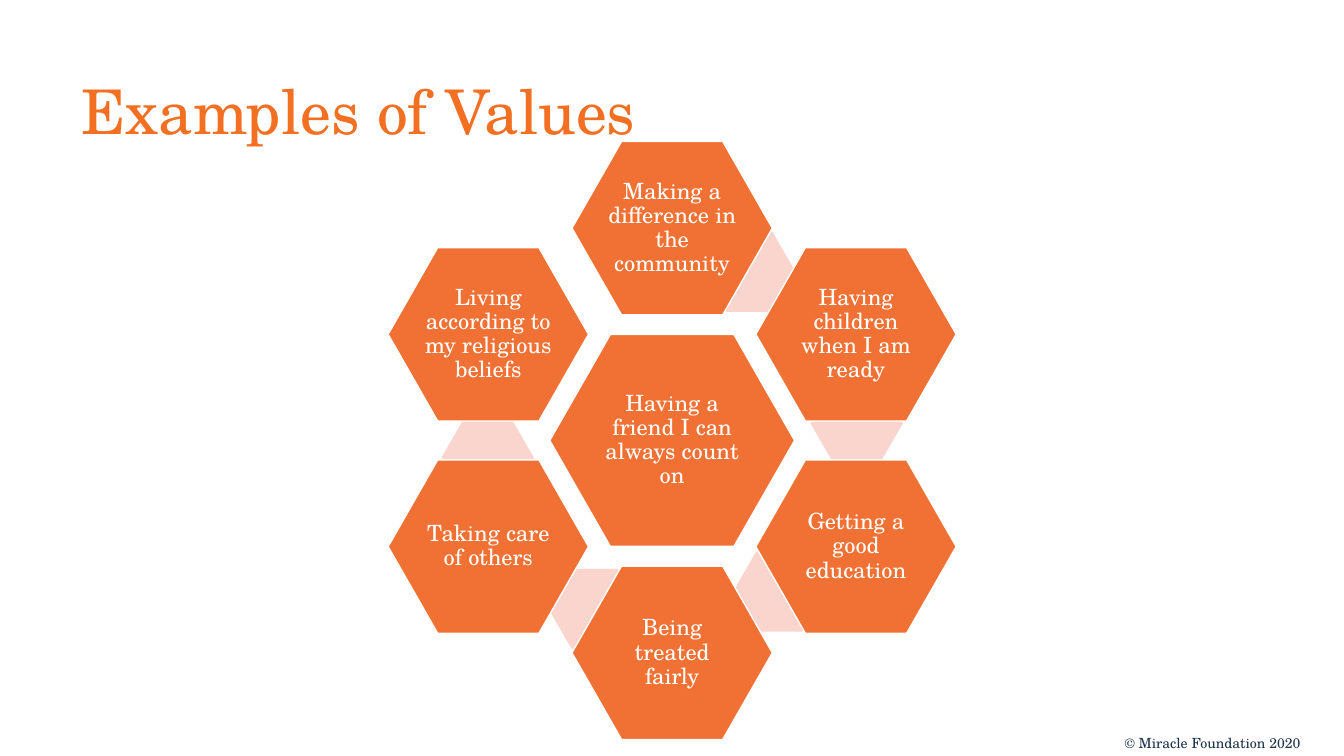
import math

import pptx
import pptx.dml.color
import pptx.enum.shapes
import pptx.enum.text
import pptx.util
from pptx.util import Cm

FONT = "TeX Gyre Schola"
ORANGE = "F17134"
PINK = "FAD5CE"
WHITE = "FFFFFF"
CENTRE_X, CENTRE_Y = 16.94, 11.1
CENTRE_VALUE = "Having a friend I can always count on"
RING_VALUES = [
    "Making a difference in the community",
    "Having children when I am ready",
    "Getting a good education",
    "Being treated fairly",
    "Taking care of others",
    "Living according to my religious beliefs",
]


def colour(hex_text):
    return pptx.dml.color.RGBColor.from_string(hex_text)


def style_paragraph(para, size, hex_text, align, spacing=None):
    para.alignment = align
    para.line_spacing = spacing
    para.font.name = FONT
    para.font.size = pptx.util.Pt(size)
    para.font.color.rgb = colour(hex_text)


def ring_point(radius, start, step):
    """Return the point at a clockwise 60-degree step around the centre."""
    angle = math.radians(start + 60 * step)
    return CENTRE_X + radius * math.cos(angle), CENTRE_Y + radius * math.sin(angle)


def add_hexagon(page, middle, width, height, adjustment, fill):
    x, y = middle
    hexagon = page.shapes.add_shape(
        pptx.enum.shapes.MSO_SHAPE.HEXAGON,
        Cm(x - width / 2), Cm(y - height / 2), Cm(width), Cm(height))
    hexagon.adjustments[0] = adjustment
    hexagon.shadow.inherit = False
    hexagon.fill.solid()
    hexagon.fill.fore_color.rgb = colour(fill)
    hexagon.line.fill.background()
    return hexagon


def add_value(page, text, middle, width, height):
    hexagon = add_hexagon(page, middle, width, height, 0.286, ORANGE)
    hexagon.line.color.rgb = colour(WHITE)
    hexagon.line.width = pptx.util.Pt(1)
    frame = hexagon.text_frame
    frame.word_wrap = True
    frame.vertical_anchor = pptx.enum.text.MSO_ANCHOR.MIDDLE
    frame.margin_left = frame.margin_right = Cm(0.05)
    frame.margin_top = frame.margin_bottom = Cm(0.05)
    frame.text = text
    style_paragraph(frame.paragraphs[0], 16, WHITE, pptx.enum.text.PP_ALIGN.CENTER, 0.9)


def add_title(page, text):
    title = page.shapes.title
    title.left, title.top, title.width, title.height = Cm(1.8), Cm(1.04), Cm(29.21), Cm(3.68)
    title.text_frame.text = text
    title.text_frame.vertical_anchor = pptx.enum.text.MSO_ANCHOR.MIDDLE
    style_paragraph(title.text_frame.paragraphs[0], 44, "F37023",
                    pptx.enum.text.PP_ALIGN.LEFT, 0.9)


def add_copyright(page, text):
    box = page.shapes.add_textbox(Cm(28.09), Cm(18.39), Cm(5.23), Cm(0.71))
    frame = box.text_frame
    frame.word_wrap = True
    frame.auto_size = pptx.enum.text.MSO_AUTO_SIZE.SHAPE_TO_FIT_TEXT
    frame.text = text
    style_paragraph(frame.paragraphs[0], 10, "1D334A", pptx.enum.text.PP_ALIGN.LEFT)


def main():
    deck = pptx.Presentation()
    deck.slide_width, deck.slide_height = Cm(33.87), Cm(19.05)
    page = deck.slides.add_slide(deck.slide_layouts[5])
    add_title(page, "Examples of Values")
    for step in range(len(RING_VALUES) - 1):
        add_hexagon(page, ring_point(4.67, -65.3, step), 2.33, 2.01, 0.289, PINK)
    add_value(page, CENTRE_VALUE, (CENTRE_X, CENTRE_Y), 6.17, 5.34)
    for step, text in enumerate(RING_VALUES):
        add_value(page, text, ring_point(5.35, -90, step), 5.05, 4.37)
    add_copyright(page, "© Miracle Foundation 2020")
    deck.save("out.pptx")


if __name__ == "__main__":
    main()
